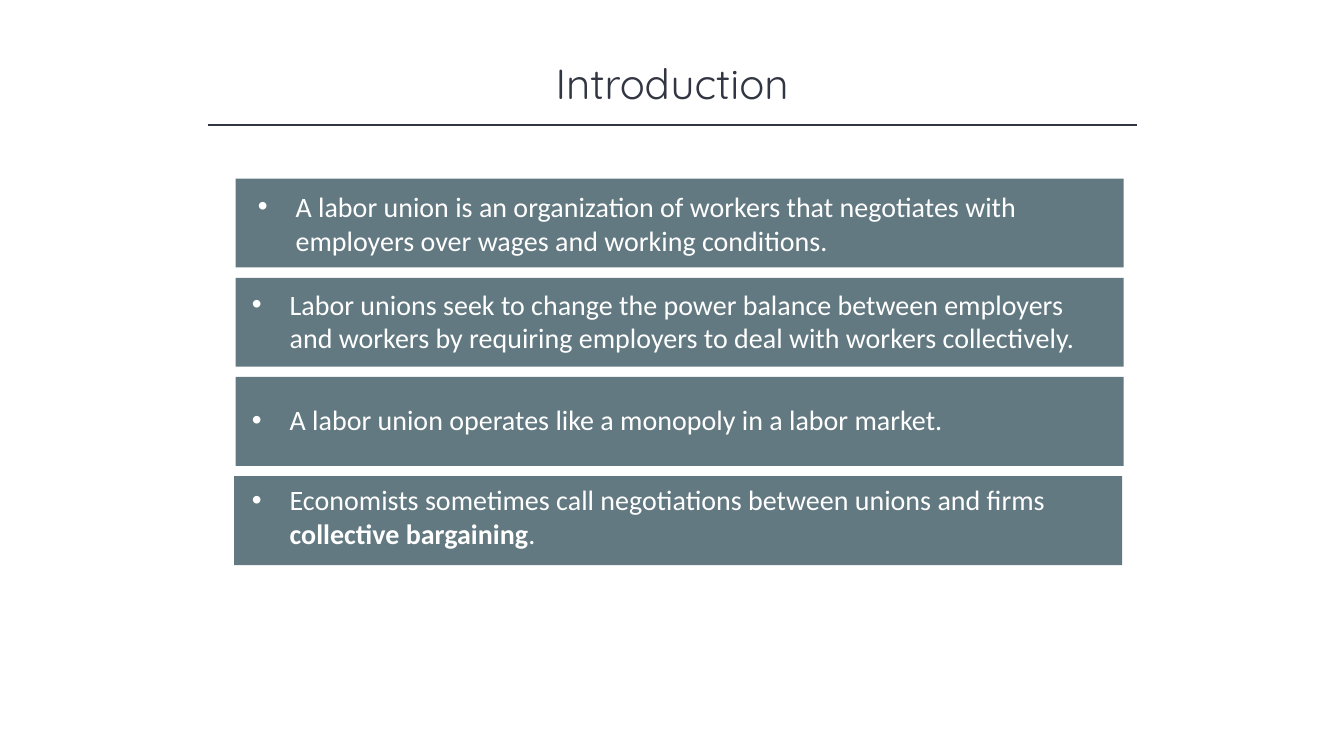
from lxml.etree import SubElement
from pptx import Presentation
from pptx.dml.color import RGBColor
from pptx.enum.shapes import MSO_CONNECTOR, MSO_SHAPE
from pptx.enum.text import MSO_ANCHOR, MSO_AUTO_SIZE, PP_ALIGN
from pptx.oxml.ns import qn
from pptx.util import Cm, Pt

INK = "323542"
SLATE = "627981"
WHITE = "FFFFFF"
CARD_TOP, CARD_PITCH = 4.5, 2.5
CARD_WIDTH, CARD_HEIGHT = 22.38, 2.24
TEXT_WIDTH = 21.69

# Each card: left of card, left of text, text offset from card top, text height, runs (text, bold)
CARDS = [
    (5.94, 6.25, 0.15, 1.96, [("A labor union is an organization of workers that negotiates with "
                               "employers over wages and working conditions.", False)]),
    (5.94, 6.1, 0.11, 1.96, [("Labor unions seek to change the power balance between employers and "
                              "workers by requiring employers to deal with workers collectively.", False)]),
    (5.94, 6.1, 0.53, 1.12, [("A labor union operates like a monopoly in a labor market.", False)]),
    (5.9, 6.1, 0.04, 1.96, [("Economists sometimes call negotiations between unions and firms ", False),
                            ("collective bargaining", True), (".", False)]),
]


def color(value):
    """Return the colour for a hex string."""
    return RGBColor.from_string(value)


def style_font(font, name, size, value, bold=False):
    """Set the typeface, size, colour and weight of a font."""
    font.name = name
    font.size = Pt(size)
    font.bold = bold
    font.color.rgb = color(value)


def add_title(slide, text):
    """Add the centred slide title."""
    shape = slide.shapes.add_textbox(Cm(4.24), Cm(1.32), Cm(25.4), Cm(1.55))
    text_frame = shape.text_frame
    text_frame.word_wrap = True
    text_frame.vertical_anchor = MSO_ANCHOR.MIDDLE
    text_frame.text = text
    paragraph = text_frame.paragraphs[0]
    paragraph.alignment = PP_ALIGN.CENTER
    style_font(paragraph.runs[0].font, "Quicksand", 30, INK)


def add_rule(slide):
    """Add the thin line under the title."""
    line = slide.shapes.add_connector(
        MSO_CONNECTOR.STRAIGHT, Cm(5.23), Cm(3.15), Cm(28.65), Cm(3.15))
    line.line.color.rgb = color(INK)
    line.line.width = Pt(1)
    SubElement(line._element.spPr, qn("a:effectLst"))


def add_bullet(paragraph):
    """Give a paragraph a round bullet with a hanging indent."""
    properties = paragraph._p.get_or_add_pPr()
    properties.set("marL", str(Cm(0.95)))
    properties.set("indent", str(-Cm(0.95)))
    SubElement(properties, qn("a:buFont"), typeface="Arial")
    SubElement(properties, qn("a:buChar"), char="•")


def add_rectangle(group, left, top, width, height):
    """Add a plain slate rectangle to a group."""
    shape = group.shapes.add_shape(
        MSO_SHAPE.RECTANGLE, Cm(left), Cm(top), Cm(width), Cm(height))
    shape.shadow.inherit = False
    shape.fill.solid()
    shape.fill.fore_color.rgb = color(SLATE)
    shape.line.fill.background()
    return shape


def add_card(slide, top, card_left, text_left, text_offset, text_height, runs):
    """Add a card with its bulleted statement."""
    group = slide.shapes.add_group_shape()
    add_rectangle(group, card_left, top, CARD_WIDTH, CARD_HEIGHT)
    shape = add_rectangle(group, text_left, top + text_offset, TEXT_WIDTH, text_height)
    text_frame = shape.text_frame
    text_frame.word_wrap = True
    text_frame.auto_size = MSO_AUTO_SIZE.SHAPE_TO_FIT_TEXT
    text_frame.vertical_anchor = MSO_ANCHOR.TOP
    paragraph = text_frame.paragraphs[0]
    paragraph.alignment = PP_ALIGN.LEFT
    add_bullet(paragraph)
    for text, bold in runs:
        run = paragraph.add_run()
        run.text = text
        style_font(run.font, "Calibri", 20, WHITE, bold)


def main():
    """Build the slide and save it."""
    presentation = Presentation()
    presentation.slide_width = Cm(33.87)
    presentation.slide_height = Cm(19.05)
    slide = presentation.slides.add_slide(presentation.slide_layouts[6])
    add_title(slide, "Introduction")
    add_rule(slide)
    for index, card in enumerate(CARDS):
        add_card(slide, CARD_TOP + index * CARD_PITCH, *card)
    presentation.save("out.pptx")


if __name__ == "__main__":
    main()
